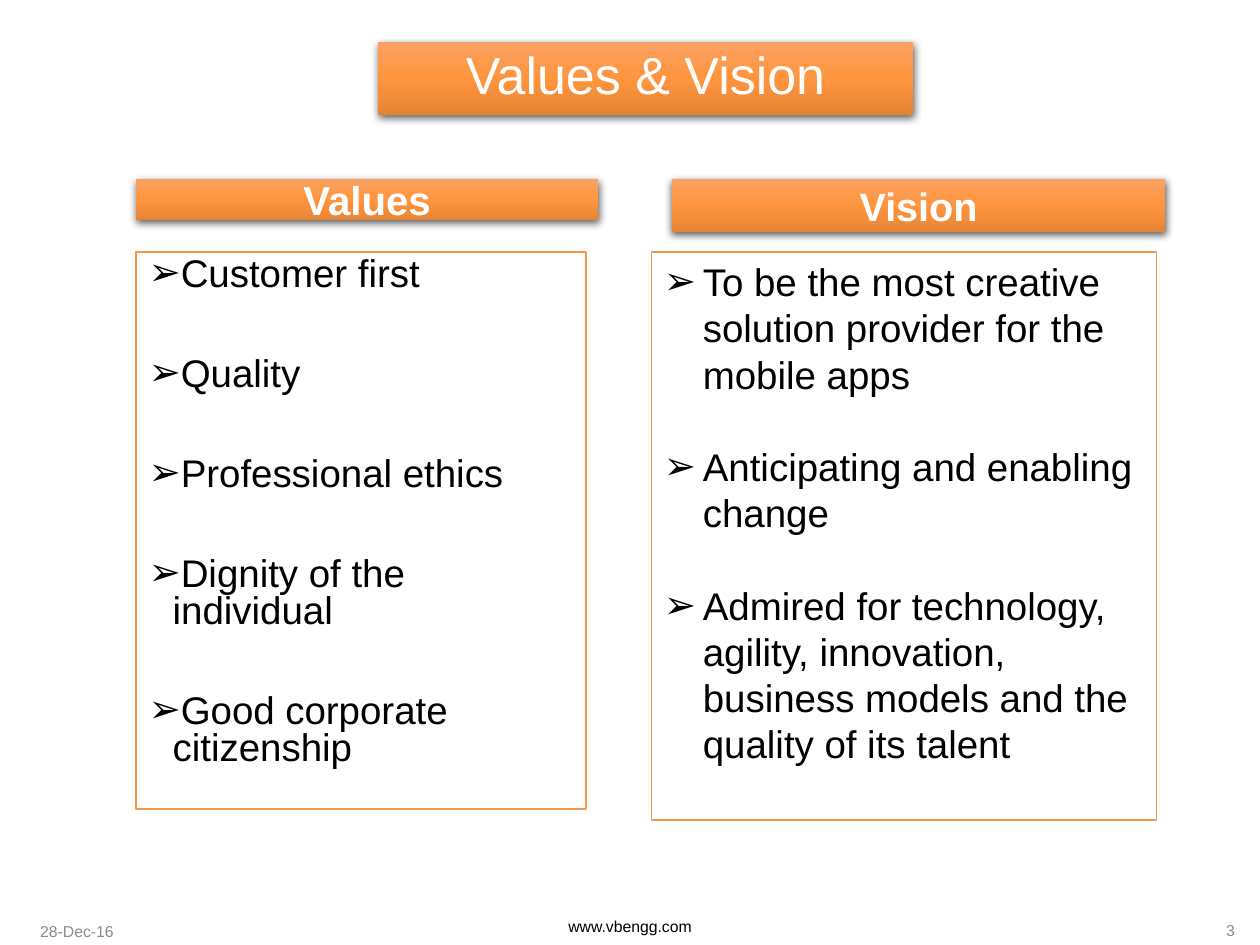
from lxml import etree
from pptx import Presentation
from pptx.dml.color import RGBColor
from pptx.enum import shapes, text
from pptx.oxml import parse_xml
from pptx.oxml.ns import nsdecls, qn
from pptx.util import Inches, Pt

COLORS = {
    "light": "FAA263", "orange": "FF953E", "dark": "E58435",
    "border": "F79646", "white": "FFFFFF", "black": "000000", "gray": "8C8C8C",
}
ALIGN = text.PP_ALIGN


def rgb(name):
    return RGBColor.from_string(COLORS[name])


def write_text(paragraph, content, size, color="black", bold=False, align=ALIGN.LEFT):
    paragraph.text = content
    paragraph.alignment = align
    font = paragraph.font
    font.name = "Arial"
    font.size = Pt(size)
    font.bold = bold
    font.color.rgb = rgb(color)


class SlideBuilder:
    def __init__(self, slide):
        self.slide = slide

    def place(self, shape, box):
        shape.left, shape.top, shape.width, shape.height = map(Inches, box)

    def rectangle(self, box):
        shape = self.slide.shapes.add_shape(
            shapes.MSO_SHAPE.RECTANGLE, *map(Inches, box))
        shape.shadow.inherit = False
        return shape

    def prepare_frame(self, shape, anchor):
        frame = shape.text_frame
        frame.word_wrap = True
        frame.auto_size = text.MSO_AUTO_SIZE.NONE
        frame.vertical_anchor = anchor
        return frame

    def banner(self, content, box, size, bold=True, spacing=1.0, shape=None):
        """Heading bar with an orange gradient and a soft shadow below."""
        shape = shape or self.rectangle(box)
        self.place(shape, box)
        shape.line.fill.background()
        properties = shape._element.spPr
        for old in properties.findall(qn("a:effectLst")):
            properties.remove(old)
        stops = "".join(
            f'<a:gs pos="{position}"><a:srgbClr val="{COLORS[name]}"/></a:gs>'
            for position, name in ((0, "light"), (50000, "orange"), (100000, "dark")))
        outline = properties.find(qn("a:ln"))
        outline.addprevious(parse_xml(
            f'<a:gradFill {nsdecls("a")} rotWithShape="1"><a:gsLst>{stops}</a:gsLst>'
            '<a:lin ang="5400000" scaled="0"/></a:gradFill>'))
        outline.addnext(parse_xml(
            f'<a:effectLst {nsdecls("a")}><a:outerShdw blurRad="{Pt(4.5)}" '
            f'dist="{Pt(1.5)}" dir="5400000" rotWithShape="0">'
            f'<a:srgbClr val="{COLORS["black"]}"><a:alpha val="63000"/></a:srgbClr>'
            '</a:outerShdw></a:effectLst>'))
        paragraph = self.prepare_frame(shape, text.MSO_ANCHOR.MIDDLE).paragraphs[0]
        write_text(paragraph, content, size, "white", bold, ALIGN.CENTER)
        paragraph.line_spacing = spacing

    def bullet_list(self, items, box, indent, gap, spacing=1.0, shape=None):
        """Outlined box with arrow bullets, spaced by a fixed gap."""
        shape = shape or self.rectangle(box)
        self.place(shape, box)
        shape.fill.solid()
        shape.fill.fore_color.rgb = rgb("white")
        shape.line.color.rgb = rgb("border")
        shape.line.width = Pt(1)
        frame = self.prepare_frame(shape, text.MSO_ANCHOR.TOP)
        for index, item in enumerate(items):
            paragraph = frame.add_paragraph() if index else frame.paragraphs[0]
            properties = paragraph._p.get_or_add_pPr()
            properties.set("marL", str(Inches(indent)))
            properties.set("indent", str(-Inches(indent)))
            bullet_color = etree.SubElement(properties, qn("a:buClr"))
            etree.SubElement(bullet_color, qn("a:srgbClr"), val=COLORS["black"])
            etree.SubElement(properties, qn("a:buFont"), typeface="Arial")
            etree.SubElement(properties, qn("a:buChar"), char="➢")
            write_text(paragraph, item, 22)
            paragraph.line_spacing = spacing
            paragraph.space_before = Pt(gap if index else 0)

    def footer(self, content, box, color, align):
        shape = self.slide.shapes.add_textbox(*map(Inches, box))
        frame = self.prepare_frame(shape, text.MSO_ANCHOR.MIDDLE)
        write_text(frame.paragraphs[0], content, 9, color, align=align)


def main():
    presentation = Presentation()
    presentation.slide_width, presentation.slide_height = Inches(10), Inches(7.5)
    slide = presentation.slides.add_slide(presentation.slide_layouts[1])
    builder = SlideBuilder(slide)

    # Title
    builder.banner("Values & Vision", (3, 0.33, 4.25, 0.58), 29.7,
                   bold=False, spacing=0.9, shape=slide.shapes.title)

    # Values column
    builder.bullet_list(
        ["Customer first", "Quality", "Professional ethics",
         "Dignity of the individual", "Good corporate citizenship"],
        (1.08, 2, 3.57, 4.42), indent=0.19, gap=36, spacing=0.8,
        shape=slide.placeholders[1])
    builder.banner("Values", (1.08, 1.42, 3.67, 0.33), 23)

    # Vision column
    builder.banner("Vision", (5.33, 1.42, 3.92, 0.42), 22.6)
    builder.bullet_list(
        ["To be the most creative solution provider for the mobile apps",
         "Anticipating and enabling change",
         "Admired for technology, agility, innovation, business models "
         "and the quality of its talent"],
        (5.17, 2, 4.01, 4.51), indent=0.31, gap=26.5)

    # Footer
    builder.footer("28-Dec-16", (0.22, 7.19, 2.25, 0.4), "gray", ALIGN.LEFT)
    builder.footer("www.vbengg.com", (3.31, 7.15, 3.38, 0.4), "black", ALIGN.CENTER)
    builder.footer("3", (7.65, 7.19, 2.25, 0.38), "gray", ALIGN.RIGHT)

    presentation.save("out.pptx")


if __name__ == "__main__":
    main()
